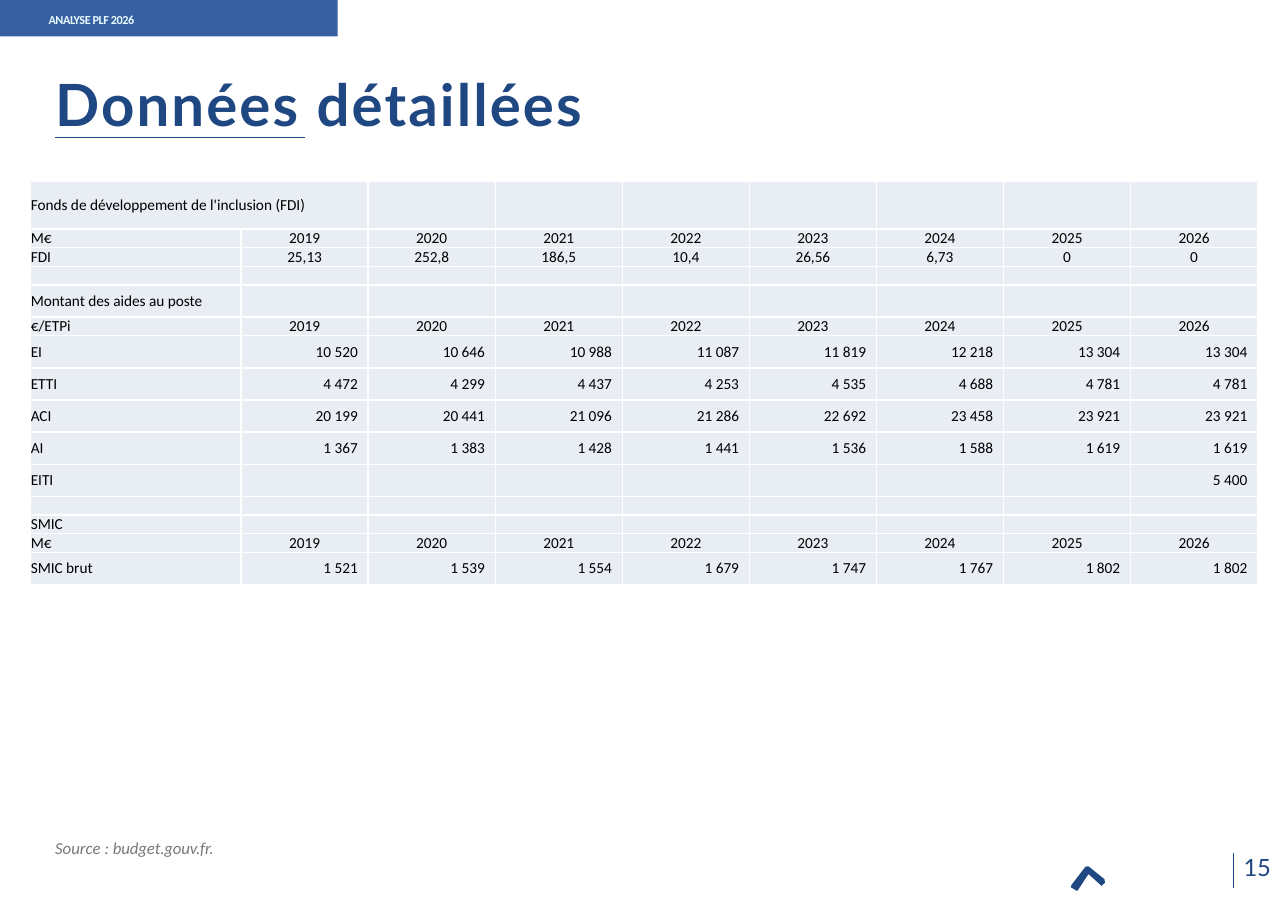
from lxml import etree
from pptx import Presentation, util as u
from pptx.dml.color import RGBColor
from pptx.enum import shapes, text
from pptx.oxml import ns

NAVY, BLUE, PALE, GREY = "1F4782", "3660A1", "EAFAFF", "797A76"
CELL, WHITE, BLACK = "E9EDF4", "FFFFFF", "000000"
YEARS = [str(year) for year in range(2019, 2027)]

HEAD, SMALL, TALL = 1.11, 0.43, 0.74
LEFT, CENTER, RIGHT = text.PP_ALIGN.LEFT, text.PP_ALIGN.CENTER, text.PP_ALIGN.RIGHT

# Row height, label, alignment of the values, values
ROWS = [
    (HEAD, "Fonds de développement de l'inclusion (FDI)", LEFT, []),
    (SMALL, "M€", CENTER, YEARS),
    (SMALL, "FDI", CENTER, ["25,13", "252,8", "186,5", "10,4", "26,56", "6,73", "0", "0"]),
    (SMALL, "", LEFT, []),
    (TALL, "Montant des aides au poste", LEFT, []),
    (SMALL, "€/ETPi", CENTER, YEARS),
    (TALL, "EI", RIGHT, ["10 520", "10 646", "10 988", "11 087",
                         "11 819", "12 218", "13 304", "13 304"]),
    (TALL, "ETTI", RIGHT, ["4 472", "4 299", "4 437", "4 253",
                           "4 535", "4 688", "4 781", "4 781"]),
    (TALL, "ACI", RIGHT, ["20 199", "20 441", "21 096", "21 286",
                          "22 692", "23 458", "23 921", "23 921"]),
    (TALL, "AI", RIGHT, ["1 367", "1 383", "1 428", "1 441",
                         "1 536", "1 588", "1 619", "1 619"]),
    (TALL, "EITI", RIGHT, [""] * 7 + ["5 400"]),
    (SMALL, "", LEFT, []),
    (SMALL, "SMIC", LEFT, []),
    (SMALL, "M€", CENTER, YEARS),
    (TALL, "SMIC brut", RIGHT, ["1 521", "1 539", "1 554", "1 679",
                                "1 747", "1 767", "1 802", "1 802"]),
]
CHEVRON = [(24.82, 20.53), (24.69, 20.45), (24.71, 20.4), (25.03, 19.98), (25.1, 19.97),
           (25.47, 20.27), (25.48, 20.35), (25.4, 20.42), (25.1, 20.15), (24.85, 20.53)]


def rgb(code):
    return RGBColor.from_string(code)


class Page:
    def __init__(self, prs):
        self.s = prs.slides.add_slide(prs.slide_layouts[5])
        self.shapes = self.s.shapes

    def style(self, p, font, size, color, bold=False, italic=False):
        f = p.font
        f.name, f.size, f.bold, f.italic = font, u.Pt(size), bold, italic
        f.color.rgb = rgb(color)

    def fill_frame(self, tf, runs, font, size, color, **look):
        """Fill a frame with one paragraph; runs are (words, tracking in points)."""
        tf.margin_left = tf.margin_right = tf.margin_top = tf.margin_bottom = 0
        tf.word_wrap = True
        tf.auto_size = text.MSO_AUTO_SIZE.NONE
        tf.vertical_anchor = text.MSO_ANCHOR.TOP
        p = tf.paragraphs[0]
        p.alignment = LEFT
        for words, tracking in runs:
            r = p.add_run()
            r.text = words
            r._r.get_or_add_rPr().set("spc", str(round(tracking * 100)))
        self.style(p, font, size, color, **look)
        return p

    def title(self, words, *box):
        sp = self.shapes.title
        sp.left, sp.top, sp.width, sp.height = map(u.Cm, box)
        p = self.fill_frame(sp.text_frame, [(words, 1.4)], "Lato", 38, NAVY, bold=True)
        p.line_spacing = u.Pt(47.6)
        sp.text_frame.margin_top = u.Cm(0.36)

    def label(self, runs, box, font, size, color, **look):
        sp = self.shapes.add_textbox(*map(u.Cm, box))
        self.fill_frame(sp.text_frame, runs, font, size, color, **look)

    def paint(self, sp, color):
        sp.shadow.inherit = False
        sp.fill.solid()
        sp.fill.fore_color.rgb = rgb(color)
        sp.line.fill.background()

    def bar(self, color, *box):
        sp = self.shapes.add_shape(shapes.MSO_SHAPE.RECTANGLE, *map(u.Cm, box))
        self.paint(sp, color)

    def outline(self, color, points):
        start, *rest = [(u.Cm(x), u.Cm(y)) for x, y in points]
        builder = self.shapes.build_freeform(*start)
        builder.add_line_segments(rest, close=True)
        self.paint(builder.convert_to_shape(), color)

    def line(self, width, *ends):
        c = self.shapes.add_connector(shapes.MSO_CONNECTOR.STRAIGHT, *map(u.Cm, ends))
        c.line.color.rgb = rgb(NAVY)
        c.line.width = u.Pt(width)
        etree.SubElement(c._element.spPr, ns.qn("a:effectLst"))

    def cell(self, cell, words, align):
        cell.margin_left = cell.margin_top = cell.margin_bottom = 0
        cell.margin_right = u.Cm(0.24 if align == RIGHT else 0)
        cell.vertical_anchor = text.MSO_ANCHOR.MIDDLE
        tc_pr = cell._tc.get_or_add_tcPr()
        for side in "LRTB":
            ln = etree.SubElement(tc_pr, ns.qn(f"a:ln{side}"), w=str(u.Pt(1)))
            fill = etree.SubElement(ln, ns.qn("a:solidFill"))
            etree.SubElement(fill, ns.qn("a:srgbClr"), val=WHITE)
        cell.fill.solid()
        cell.fill.fore_color.rgb = rgb(CELL)
        p = cell.text_frame.paragraphs[0]
        p.alignment = align
        if words:
            p.add_run().text = words
        self.style(p, "Calibri", 10, BLACK)
        if not words:
            etree.SubElement(p._p, ns.qn("a:endParaRPr"), sz="1000")

    def table(self, rows, left, top, label_width, value_width):
        n = len(YEARS)
        width = label_width + n * value_width
        height = sum(row[0] for row in rows)
        frame = self.shapes.add_table(len(rows), n + 1, *map(u.Cm, (left, top, width, height)))
        t = frame.table
        t.first_row = t.horz_banding = False
        for i, column in enumerate(t.columns):
            column.width = u.Cm(value_width if i else label_width)
        for i, (row_height, label, align, values) in enumerate(rows):
            t.rows[i].height = u.Cm(row_height)
            self.cell(t.cell(i, 0), label, LEFT)
            for j, value in enumerate(values or [""] * n, 1):
                self.cell(t.cell(i, j), value, align)
        t.cell(0, 0).merge(t.cell(0, 1))


def main():
    prs = Presentation()
    prs.slide_width, prs.slide_height = u.Cm(29.7), u.Cm(21)
    page = Page(prs)
    page.outline(NAVY, CHEVRON)
    page.line(0.25, 28.43, 19.66, 28.43, 20.47)
    page.bar(BLUE, 0, 0, 7.79, 0.84)
    page.line(0.63, 1.27, 3.17, 7.03, 3.17)
    page.title("Données détaillées", 1.27, 1.14, 24.5, 1.96)
    page.label([("15", -0.2)], (28.68, 19.66, 0.9, 0.74), "Lato", 15.5, NAVY)
    page.label([("ANALYSE PLF 2026", -0.3)], (1.12, 0.28, 6.15, 0.38),
               "Calibri", 8, PALE, bold=True)
    page.label([("Source : ", 0), ("budget.gouv.fr.", -0.1)], (1.27, 19.31, 7.14, 0.5),
               "Calibri", 11, GREY, italic=True)
    page.table(ROWS, 0.71, 4.17, 4.85, 2.93)
    prs.save("out.pptx")


if __name__ == "__main__":
    main()
